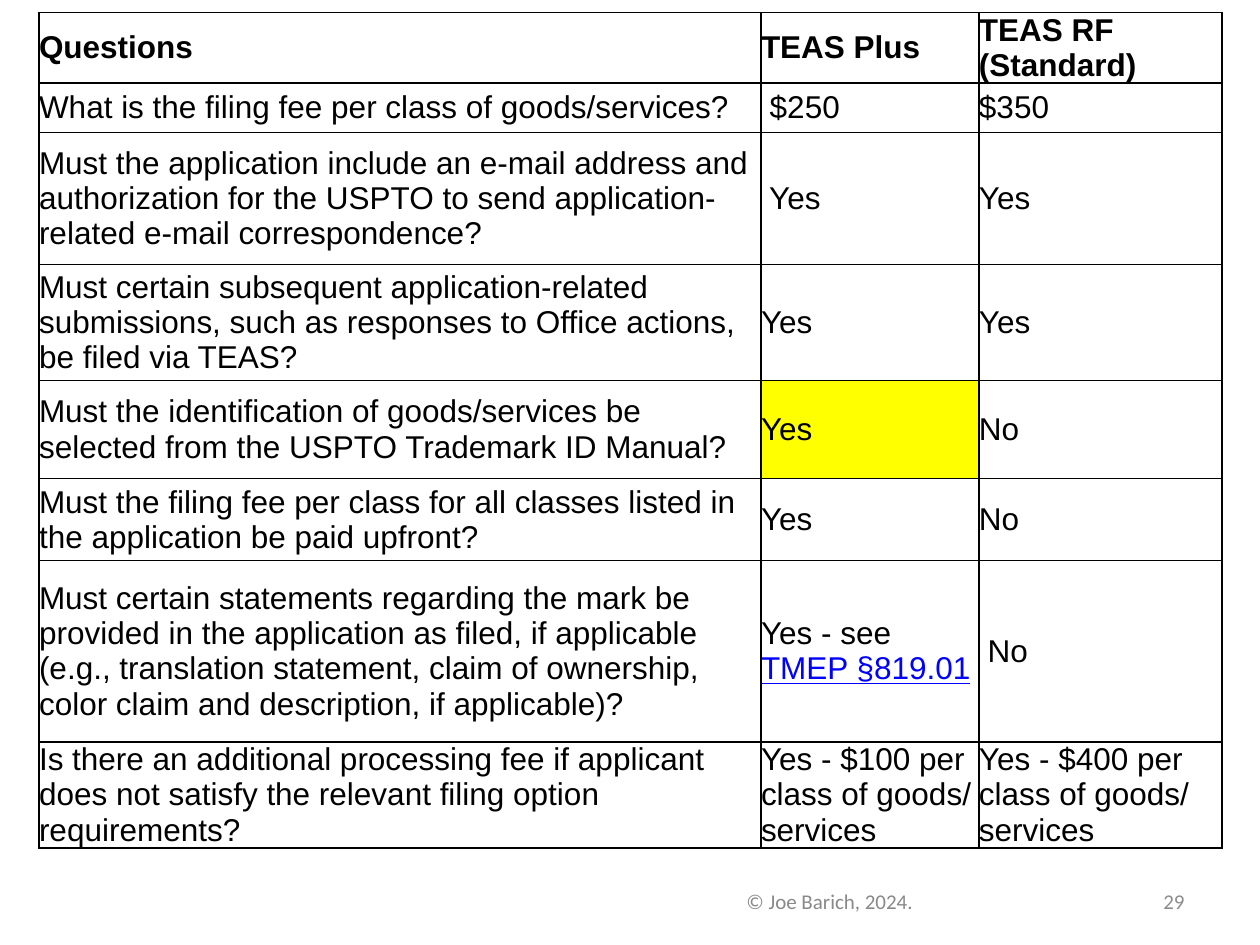
from lxml import etree
from pptx import Presentation
from pptx.dml.color import RGBColor
from pptx.enum.text import MSO_ANCHOR, PP_ALIGN
from pptx.oxml.ns import qn
from pptx.util import Inches, Pt

MIDDLE = MSO_ANCHOR.MIDDLE
CENTER, RIGHT = PP_ALIGN.CENTER, PP_ALIGN.RIGHT
BLACK, BLUE, YELLOW = "000000", "0000FF", "FFFF00"


def color(value):
    return RGBColor.from_string(value)


def add_run(p, text, size, font, hex_color, bold=False, underline=False):
    r = p.add_run()
    r.text = text
    r.font.size = Pt(size)
    r.font.name = font
    r.font.bold = bold
    r.font.underline = underline
    r.font.color.rgb = color(hex_color)


prs = Presentation()
prs.slide_width, prs.slide_height = Inches(10), Inches(7.5)
s = prs.slides.add_slide(prs.slide_layouts[6])

cols = [5.73, 1.73, 1.93]
rows = [0.26, 0.39, 1.05, 0.92, 0.78, 0.65, 1.44, 0.78]
link = "TMEP §819.01"
data = [
    ["Questions", "TEAS Plus", "TEAS RF (Standard)"],
    ["What is the filing fee per class of goods/services?", " $250", "$350"],
    ["Must the application include an e-mail address and authorization for the "
     "USPTO to send application-related e-mail correspondence?", " Yes", "Yes"],
    ["Must certain subsequent application-related submissions, such as responses "
     "to Office actions, be filed via TEAS?", "Yes", "Yes"],
    ["Must the identification of goods/services be selected from the USPTO "
     "Trademark ID Manual?", "Yes", "No"],
    ["Must the filing fee per class for all classes listed in the application "
     "be paid upfront?", "Yes", "No"],
    ["Must certain statements regarding the mark be provided in the application "
     "as filed, if applicable (e.g., translation statement, claim of ownership, "
     "color claim and description, if applicable)?", "Yes - see " + link, " No"],
    ["Is there an additional processing fee if applicant does not satisfy the "
     "relevant filing option requirements?",
     "Yes - $100 per class of goods/ services",
     "Yes - $400 per class of goods/ services"],
]

table = s.shapes.add_table(len(rows), len(cols), Inches(0.31), Inches(0.1),
                           Inches(sum(cols)), Inches(sum(rows))).table
table.first_row = table.horz_banding = False
for col, width in zip(table.columns, cols):
    col.width = Inches(width)

for i, (height, texts) in enumerate(zip(rows, data)):
    table.rows[i].height = Inches(height)
    for j, text in enumerate(texts):
        cell = table.cell(i, j)
        cell.margin_left = cell.margin_right = 0
        cell.margin_top = cell.margin_bottom = 0
        cell.vertical_anchor = MIDDLE
        tcPr = cell._tc.get_or_add_tcPr()
        for side in ("a:lnL", "a:lnR", "a:lnT", "a:lnB"):
            ln = etree.SubElement(tcPr, qn(side), w=str(Pt(1)))
            fill = etree.SubElement(ln, qn("a:solidFill"))
            etree.SubElement(fill, qn("a:srgbClr"), val=BLACK)
        if (i, j) == (4, 1):
            cell.fill.solid()
            cell.fill.fore_color.rgb = color(YELLOW)
        else:
            cell.fill.background()
        p = cell.text_frame.paragraphs[0]
        lead, found, rest = text.partition(link)
        add_run(p, lead, 18, "Arial", BLACK, bold=i == 0)
        if found:
            add_run(p, found, 18, "Arial", BLUE, underline=True)

footers = [
    (5, 3.17, "© Joe Barich, 2024.", CENTER, "898989"),
    (8.33, 1.17, "29", RIGHT, "8C8C8C"),
]
for left, width, text, align, hex_color in footers:
    sp = s.shapes.add_textbox(Inches(left), Inches(6.95), Inches(width), Inches(0.4))
    tf = sp.text_frame
    tf.word_wrap = True
    tf.vertical_anchor = MIDDLE
    p = tf.paragraphs[0]
    p.alignment = align
    add_run(p, text, 12, "Calibri", hex_color)

prs.save("out.pptx")
